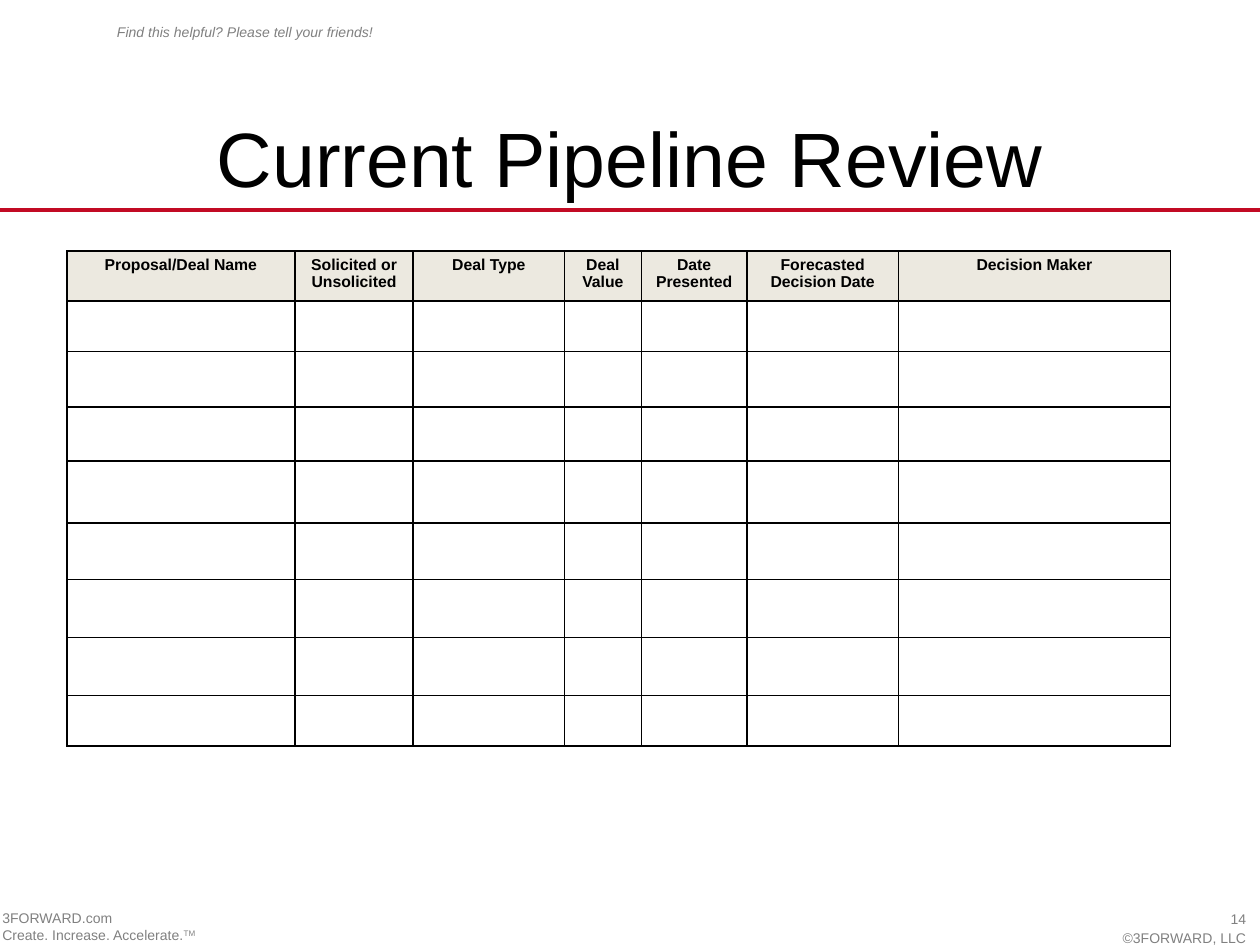
import pptx
import pptx.dml.color
import pptx.enum.shapes
import pptx.enum.text
import pptx.oxml
import pptx.oxml.ns
import pptx.util
from lxml import etree

Pt = pptx.util.Pt
RGBColor = pptx.dml.color.RGBColor
Align = pptx.enum.text.PP_ALIGN

BLACK = RGBColor(0x00, 0x00, 0x00)
GRAY = RGBColor(0x80, 0x80, 0x80)
RED = RGBColor(0xC2, 0x0A, 0x24)
BEIGE = RGBColor(0xEC, 0xE9, 0xE0)

TITLE = {"name": "Arial", "size": Pt(44), "bold": False}
HEADER = {"name": "Arial", "size": Pt(9), "bold": True}
SMALL = {"name": "Arial", "size": Pt(8)}
TAGLINE = {**SMALL, "italic": True}

COLUMNS = [
    ("Proposal/Deal Name", 130.32),
    ("Solicited or Unsolicited", 67.68),
    ("Deal Type", 86.4),
    ("Deal Value", 43.92),
    ("Date Presented", 60.48),
    ("Forecasted Decision Date", 86.4),
    ("Decision Maker", 155.52),
]
ROW_HEIGHTS = [28.8, 28.8, 31.68, 30.96, 35.28, 32.4, 33.12, 33.12, 28.08]


class PipelineSlide:
    def __init__(self, presentation):
        self.slide = presentation.slides.add_slide(presentation.slide_layouts[5])

    def style(self, font, values, color):
        for name, value in values.items():
            setattr(font, name, value)
        font.color.rgb = color

    def rule(self, left, top, right, color, width):
        line = self.slide.shapes.add_connector(
            pptx.enum.shapes.MSO_CONNECTOR.STRAIGHT, Pt(left), Pt(top), Pt(right), Pt(top))
        line.line.color.rgb = color
        line.line.width = Pt(width)
        etree.SubElement(line._element.spPr, pptx.oxml.ns.qn("a:effectLst"))

    def title(self, text, left, top, width, height):
        title = self.slide.shapes.title
        title.left, title.top, title.width, title.height = map(Pt, (left, top, width, height))
        frame = title.text_frame
        frame.auto_size = pptx.enum.text.MSO_AUTO_SIZE.NONE
        frame.vertical_anchor = pptx.enum.text.MSO_ANCHOR.MIDDLE
        paragraph = frame.paragraphs[0]
        paragraph.alignment = Align.CENTER
        run = paragraph.add_run()
        run.text = text
        self.style(run.font, TITLE, BLACK)

    def text(self, lines, box, values, alignment=Align.LEFT, gap=0):
        frame = self.slide.shapes.add_textbox(*map(Pt, box)).text_frame
        frame.word_wrap = True
        for index, line in enumerate(lines):
            paragraph = frame.add_paragraph() if index else frame.paragraphs[0]
            paragraph.alignment = alignment
            if index and gap:
                paragraph.space_before = Pt(gap)
            run = paragraph.add_run()
            run.text = line
            self.style(run.font, values, GRAY)
        return frame

    def superscript(self, paragraph, text, values):
        run = paragraph.add_run()
        run.text = text
        self.style(run.font, values, GRAY)
        run._r.get_or_add_rPr().set("baseline", "30000")

    def borders(self, cell):
        properties = cell._tc.get_or_add_tcPr()
        for side in ("lnL", "lnR", "lnT", "lnB"):
            properties.append(pptx.oxml.parse_xml(
                f'<a:{side} {pptx.oxml.ns.nsdecls("a")} w="{Pt(1)}"><a:solidFill>'
                f'<a:srgbClr val="{BLACK}"/></a:solidFill></a:{side}>'))

    def table(self, columns, heights, left, top):
        width = sum(column_width for _, column_width in columns)
        table = self.slide.shapes.add_table(
            len(heights), len(columns), Pt(left), Pt(top), Pt(width), Pt(sum(heights))).table
        table.first_row = table.horz_banding = False
        for row, height in zip(table.rows, heights):
            row.height = Pt(height)
        for cell in table.iter_cells():
            self.borders(cell)
            cell.fill.background()
        for index, (label, column_width) in enumerate(columns):
            table.columns[index].width = Pt(column_width)
            cell = table.cell(0, index)
            cell.fill.solid()
            cell.fill.fore_color.rgb = BEIGE
            paragraph = cell.text_frame.paragraphs[0]
            paragraph.alignment = Align.CENTER
            paragraph.line_spacing = 0.95
            run = paragraph.add_run()
            run.text = label
            self.style(run.font, HEADER, BLACK)


def main():
    presentation = pptx.Presentation()
    presentation.slide_width, presentation.slide_height = Pt(720), Pt(540)
    page = PipelineSlide(presentation)
    page.rule(0, 120.24, 720, RED, 2.25)
    page.text(["Find this helpful? Please tell your friends!"], (59.76, 10.08, 221.76, 17.28), TAGLINE)
    page.title("Current Pipeline Review", 36, 58.32, 648, 61.92)
    page.table(COLUMNS, ROW_HEIGHTS, 38.16, 143.28)
    page.text(["14", "©3FORWARD, LLC"], (551.52, 516.96, 167.76, 23.04), SMALL, Align.RIGHT, gap=1)
    footer = page.text(["3FORWARD.com", "Create. Increase. Accelerate."],
                       (-5.76, 516.24, 264.24, 26.64), SMALL)
    page.superscript(footer.paragraphs[-1], "TM", SMALL)
    presentation.save("out.pptx")


if __name__ == "__main__":
    main()
